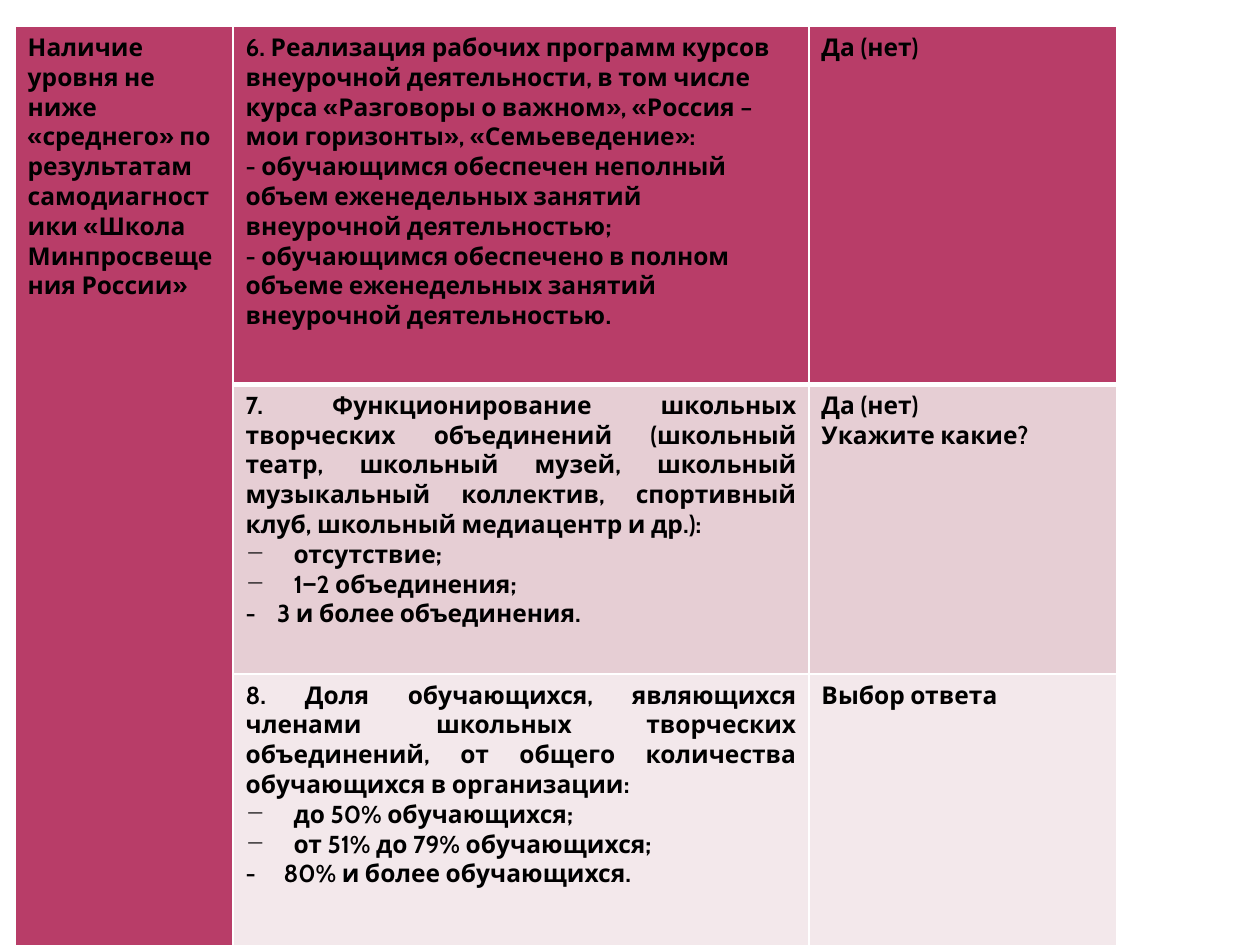
from dataclasses import dataclass

from lxml import etree
from pptx import Presentation
from pptx.dml.color import RGBColor
from pptx.enum.text import PP_ALIGN
from pptx.oxml.ns import qn
from pptx.util import Inches, Pt

LEFT = PP_ALIGN.LEFT
JUSTIFY = PP_ALIGN.JUSTIFY
BLANK_LAYOUT = 6


@dataclass(frozen=True)
class Theme:
    font: str = "Cabin"
    text_size: int = 14
    text: str = "000000"
    border: str = "FFFFFF"
    accent: str = "B83D68"
    medium: str = "E6CED4"
    light: str = "F3E8EB"
    thin: int = 1
    thick: int = 3


@dataclass(frozen=True)
class Line:
    text: str
    align: PP_ALIGN = LEFT
    hanging: float = 0
    bullet: str = ""


@dataclass(frozen=True)
class Criterion:
    height: float
    fill: str
    indicator: list[Line]
    answer: list[Line]


THEME = Theme()
COLUMN_WIDTHS = (1.73, 4.57, 2.44)


def option(text: str) -> Line:
    return Line(text, JUSTIFY, 0.38, "−")


LEVEL = [Line("Наличие уровня не ниже «среднего» по результатам самодиагностики «Школа Минпросвещения России»")]
CRITERIA = [
    Criterion(2.84, THEME.accent, [
        Line("6. Реализация рабочих программ курсов внеурочной деятельности, в том числе курса "
             "«Разговоры о важном», «Россия – мои горизонты», «Семьеведение»:"),
        Line("- обучающимся обеспечен неполный объем еженедельных занятий внеурочной деятельностью;"),
        Line("- обучающимся обеспечено в полном объеме еженедельных занятий внеурочной деятельностью."),
    ], [Line("Да (нет)")]),
    Criterion(2.3, THEME.medium, [
        Line("7. Функционирование школьных творческих объединений (школьный театр, школьный музей, "
             "школьный музыкальный коллектив, спортивный клуб, школьный медиацентр и др.):", JUSTIFY),
        option("отсутствие;"),
        option("1‒2 объединения;"),
        Line("-\t3 и более объединения.", hanging=0.25),
    ], [Line("Да (нет)"), Line("Укажите какие?")]),
    Criterion(2.03, THEME.light, [
        Line("8. Доля обучающихся, являющихся членами школьных творческих объединений, "
             "от общего количества обучающихся в организации:", JUSTIFY),
        option("до 50% обучающихся;"),
        option("от 51% до 79% обучающихся;"),
        Line("-\t80% и более обучающихся.", hanging=0.3),
    ], [Line("Выбор ответа")]),
]


def set_borders(cell, widths: dict[str, int]) -> None:
    properties = cell._tc.get_or_add_tcPr()
    for position, (side, width) in enumerate(widths.items()):
        border = etree.Element(qn(f"a:ln{side}"), w=str(Pt(width)))
        fill = etree.SubElement(border, qn("a:solidFill"))
        etree.SubElement(fill, qn("a:srgbClr"), val=THEME.border)
        properties.insert(position, border)


def write_line(paragraph, line: Line) -> None:
    paragraph.alignment = line.align
    properties = paragraph._p.get_or_add_pPr()
    if line.hanging:
        properties.set("marL", str(Inches(line.hanging)))
        properties.set("indent", str(-Inches(line.hanging)))
    if line.bullet:
        etree.SubElement(properties, qn("a:buChar"), char=line.bullet)
    run = paragraph.add_run()
    run.text = line.text
    font_format = {"name": THEME.font, "size": Pt(THEME.text_size), "bold": True}
    for attribute, value in font_format.items():
        setattr(run.font, attribute, value)
    run.font.color.rgb = RGBColor.from_string(THEME.text)


def fill_cell(cell, lines: list[Line], fill: str, row: int) -> None:
    cell.fill.solid()
    cell.fill.fore_color.rgb = RGBColor.from_string(fill)
    set_borders(cell, {
        "L": THEME.thin,
        "R": THEME.thin,
        "T": THEME.thick if row == 1 else THEME.thin,
        "B": THEME.thick if row == 0 else THEME.thin,
    })
    frame = cell.text_frame
    for index, line in enumerate(lines):
        write_line(frame.add_paragraph() if index else frame.paragraphs[0], line)


def add_criteria_table(slide) -> None:
    table = slide.shapes.add_table(
        len(CRITERIA), len(COLUMN_WIDTHS), Inches(0.12), Inches(0.21),
        Inches(sum(COLUMN_WIDTHS)), Inches(sum(c.height for c in CRITERIA)),
    ).table
    table.horz_banding = False
    for column, width in zip(table.columns, COLUMN_WIDTHS):
        column.width = Inches(width)
    table.cell(0, 0).merge(table.cell(len(CRITERIA) - 1, 0))
    fill_cell(table.cell(0, 0), LEVEL, THEME.accent, 0)
    for row, criterion in enumerate(CRITERIA):
        table.rows[row].height = Inches(criterion.height)
        fill_cell(table.cell(row, 1), criterion.indicator, criterion.fill, row)
        fill_cell(table.cell(row, 2), criterion.answer, criterion.fill, row)


def main() -> None:
    presentation = Presentation()
    presentation.slide_width = Inches(10)
    presentation.slide_height = Inches(7.5)
    slide = presentation.slides.add_slide(presentation.slide_layouts[BLANK_LAYOUT])
    add_criteria_table(slide)
    presentation.save("out.pptx")


if __name__ == "__main__":
    main()
